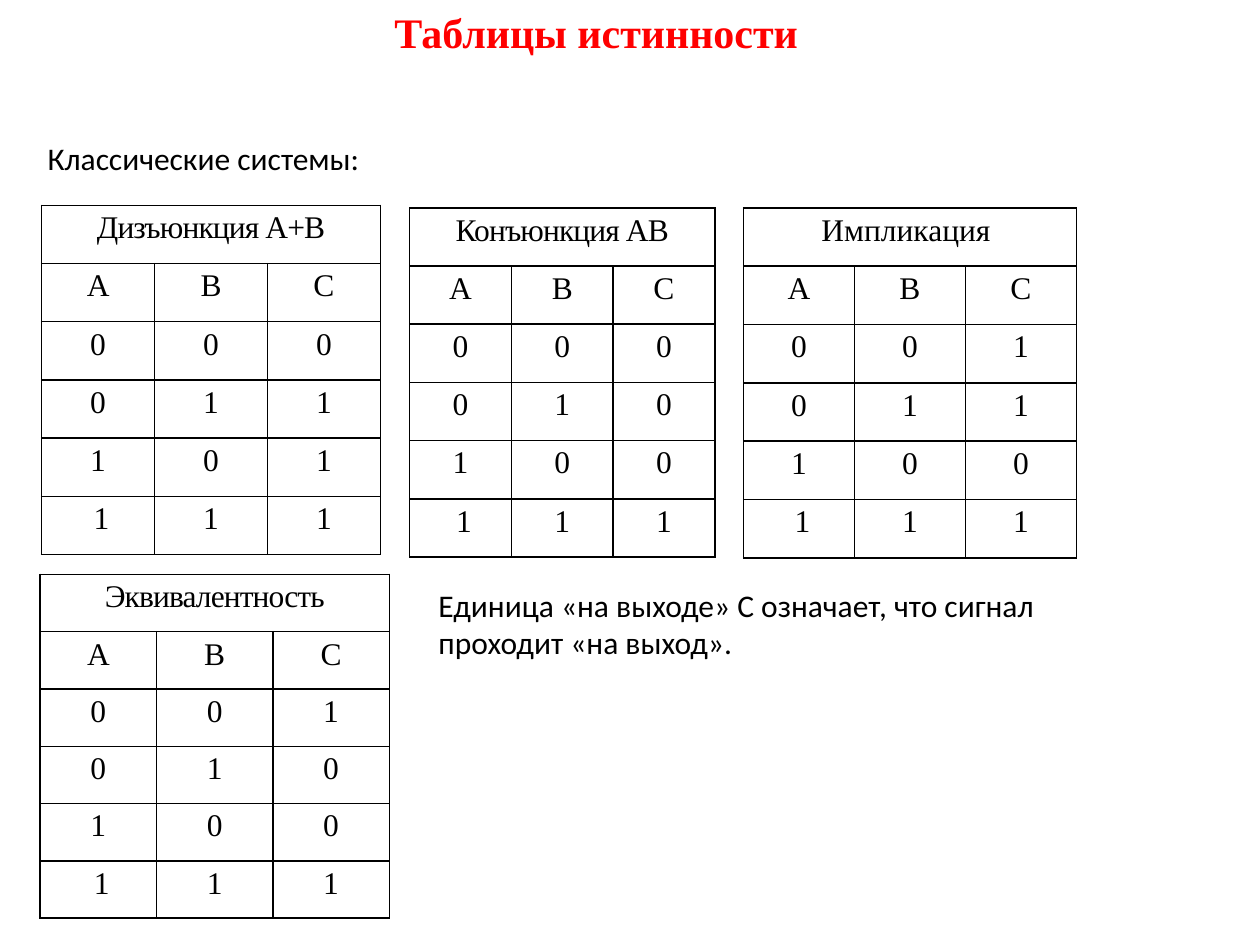
from itertools import product

from lxml.etree import SubElement
from pptx import Presentation
from pptx.dml.color import RGBColor as RGB
from pptx.enum.text import MSO_AUTO_SIZE as AutoSize, PP_ALIGN as Align
from pptx.oxml.ns import qn
from pptx.util import Cm, Pt

COLORS = {"title": "FF0000", "text": "000000", "border": "000000"}
SERIF, SANS = "Times New Roman", "Calibri"


class SlideBuilder:
    """Holds the style and the current slide."""

    def __init__(self, slide):
        self.slide = slide

    def run(self, p, text, font, size=18, color="text", bold=False, spacing=0):
        r = p.add_run()
        r.text = text
        r.font.name, r.font.size, r.font.bold = font, Pt(size), bold
        r.font.color.rgb = RGB.from_string(COLORS[color])
        if spacing:
            r._r.get_or_add_rPr().set("spc", str(round(spacing * 100)))

    def text(self, left, top, width, height, text, font, wrap=False, **style):
        sp = self.slide.shapes.add_textbox(Cm(left), Cm(top), Cm(width), Cm(height))
        tf = sp.text_frame
        tf.word_wrap = wrap
        tf.auto_size = AutoSize.SHAPE_TO_FIT_TEXT
        self.run(tf.paragraphs[0], text, font, **style)

    def borders(self, cell):
        tc_pr = cell._tc.get_or_add_tcPr()
        for side in ("lnL", "lnR", "lnT", "lnB"):
            ln = SubElement(tc_pr, qn(f"a:{side}"), w=str(Pt(1)))
            fill = SubElement(ln, qn("a:solidFill"))
            SubElement(fill, qn("a:srgbClr"), val=COLORS["border"])

    def cell(self, cell, text, spacing):
        cell.margin_left = cell.margin_right = Cm(0.18)
        cell.margin_top = cell.margin_bottom = 0
        self.borders(cell)
        cell.fill.background()
        p = cell.text_frame.paragraphs[0]
        p.alignment, p.line_spacing = Align.CENTER, 1.15
        if text:
            self.run(p, text, SERIF, spacing=spacing)

    def truth_table(self, left, top, width, height, title, outputs, title_spacing=-0.5):
        rows = [[title, "", ""], ["A", "B", "C"]]
        rows += [[a, b, c] for (a, b), c in zip(product("01", repeat=2), outputs)]
        rows[-1][0] = " 1"
        frame = self.slide.shapes.add_table(
            len(rows), 3, Cm(left), Cm(top), Cm(width), Cm(height))
        table = frame.table
        table.first_row = table.horz_banding = False
        table.cell(0, 0).merge(table.cell(0, 2))
        for i, row in enumerate(rows):
            for j, text in enumerate(row):
                self.cell(table.cell(i, j), text, -0.5 if i else title_spacing)


def main():
    prs = Presentation()
    prs.slide_width, prs.slide_height = Cm(25.4), Cm(19.05)
    s = SlideBuilder(prs.slides.add_slide(prs.slide_layouts[6]))

    # Headings
    s.text(7.7, 0, 8.74, 1.27, "Таблицы истинности", SERIF,
           size=24, color="title", bold=True)
    s.text(0.71, 2.67, 6.88, 1.02, "Классические системы:", SANS)

    # Truth tables: the last argument string lists column C
    s.truth_table(0.84, 4.14, 6.83, 7.04, "Дизъюнкция A+B", "0111")
    s.truth_table(8.26, 4.19, 6.15, 7.04, "Конъюнкция AB", "0001")
    s.truth_table(14.99, 4.19, 6.71, 7.06, "Импликация ", "1101", title_spacing=0)
    s.truth_table(0.81, 11.58, 7.04, 6.93, "Эквивалентность", "1001")

    # Note
    s.text(8.59, 11.68, 14.22, 1.8,
           "Единица «на выходе» С означает, что сигнал проходит «на выход».",
           SANS, wrap=True)

    prs.save("out.pptx")


if __name__ == "__main__":
    main()
